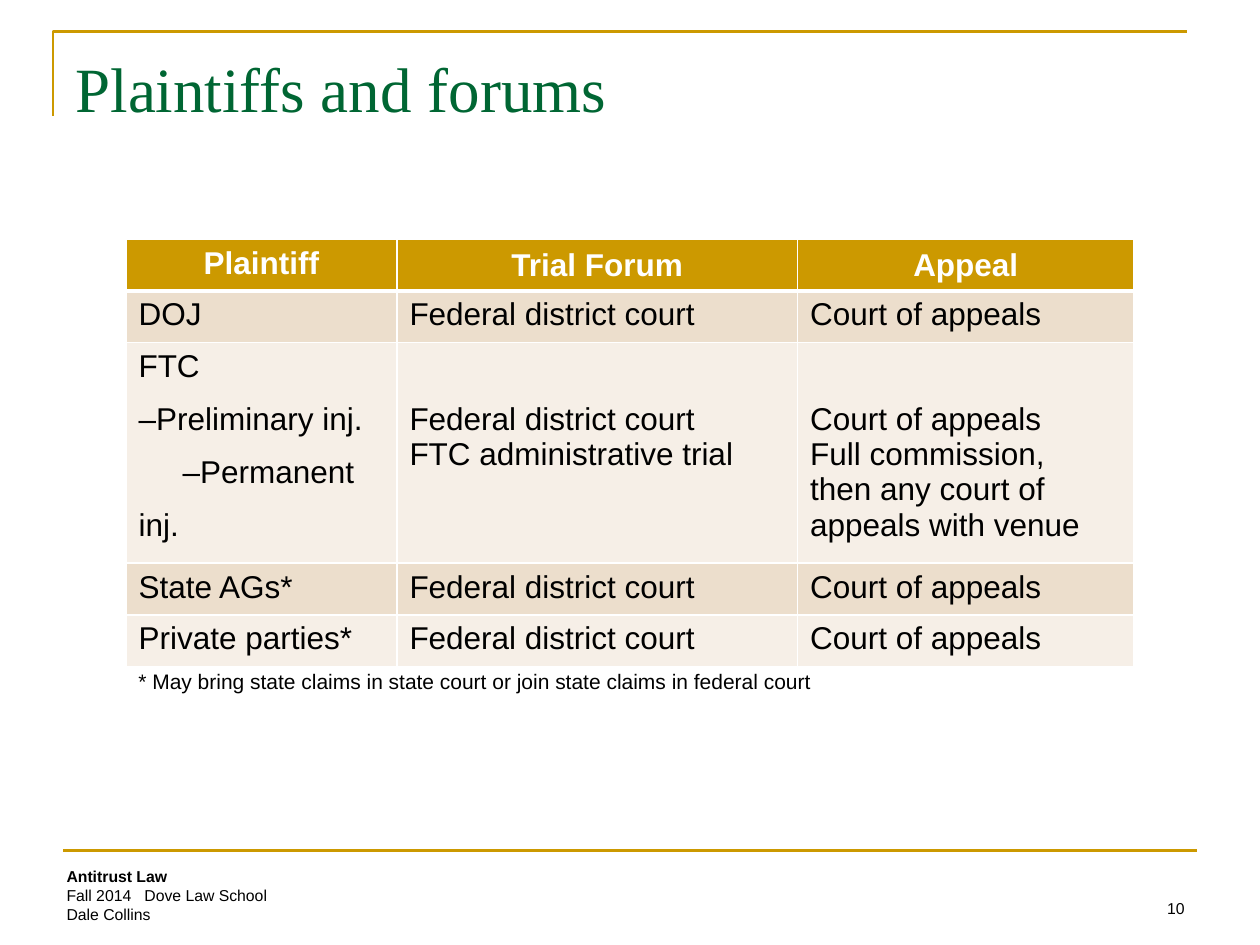
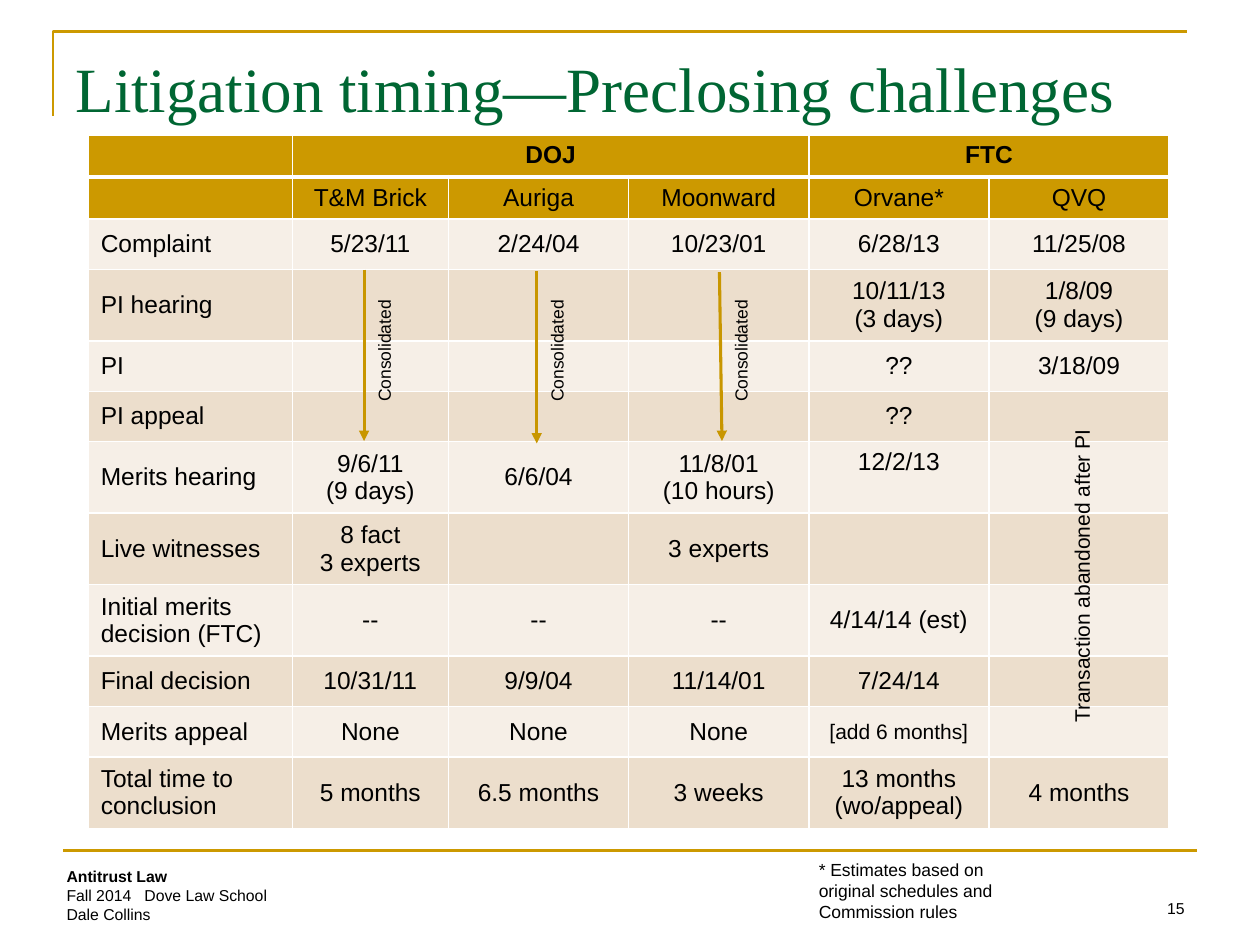
from dataclasses import dataclass

from lxml import etree
from pptx import Presentation
from pptx.dml.color import RGBColor
from pptx.enum import shapes, text
from pptx.oxml import ns
from pptx.util import Inches, Pt


@dataclass(frozen=True)
class Theme:
    gold: str = "CC9900"
    arrow: str = "C89600"
    green: str = "006633"
    dark: str = "ECDECC"
    pale: str = "F6EFE7"
    ink: str = "000000"
    white: str = "FFFFFF"
    serif: str = "Times New Roman"
    sans: str = "Arial"
    title: int = 36
    large: int = 18
    table: int = 14
    note: int = 12
    small: int = 10
    foot: int = 9


T = Theme()
LEFT, MID, RIGHT = text.PP_ALIGN.LEFT, text.PP_ALIGN.CENTER, text.PP_ALIGN.RIGHT
TOP, CENTER, BOTTOM = (text.MSO_ANCHOR.TOP, text.MSO_ANCHOR.MIDDLE,
                       text.MSO_ANCHOR.BOTTOM)

FORUMS = [
    ["Plaintiff", "Trial Forum", "Appeal"],
    ["DOJ", "Federal district court", "Court of appeals"],
    ["FTC\n–Preliminary inj.\n–Permanent inj.",
     "Federal district court\nFTC administrative trial",
     "Court of appeals\nFull commission,\nthen any court of appeals with venue"],
    ["State AGs*", "Federal district court", "Court of appeals"],
    ["Private parties*", "Federal district court", "Court of appeals"],
]

TIMING = [
    ["", "DOJ", "", "", "FTC", ""],
    ["", "T&M Brick", "Auriga", "Moonward", "Orvane*", "QVQ"],
    ["Complaint", "5/23/11", "2/24/04", "10/23/01", "6/28/13", "11/25/08"],
    ["PI hearing", "", "", "", "10/11/13\n(3 days)", "1/8/09\n(9 days)"],
    ["PI", "", "", "", "??", "3/18/09"],
    ["PI appeal", "", "", "", "??", ""],
    ["Merits hearing", "9/6/11\n(9 days)", "6/6/04", "11/8/01\n(10 hours)",
     "12/2/13", ""],
    ["Live witnesses", "8 fact\n3 experts", "", "3 experts", "", ""],
    ["Initial merits decision (FTC)", "--", "--", "--", "4/14/14 (est)", ""],
    ["Final decision", "10/31/11", "9/9/04", "11/14/01", "7/24/14", ""],
    ["Merits appeal", "None", "None", "None", "[add 6 months]", ""],
    ["Total time to conclusion", "5 months", "6.5 months", "3 weeks",
     "13 months\n(wo/appeal)", "4 months"],
]


def rgb(tone):
    return RGBColor.from_string(tone)


def write(frame, words, size=T.note, face=T.sans, tone=T.ink, bold=False, align=LEFT):
    frame.text = words
    for para in frame.paragraphs:
        para.alignment = align
        for run in para.runs:
            font = run.font
            font.size, font.name, font.bold = Pt(size), face, bold
            font.color.rgb = rgb(tone)
        if not para.runs:
            para._p.get_or_add_endParaRPr().set("sz", str(size * 100))


def label(slide, words, box, turn=0, wrap=True, anchor=TOP, **style):
    shape = slide.shapes.add_textbox(*map(Inches, box))
    shape.rotation = turn
    frame = shape.text_frame
    frame.word_wrap, frame.vertical_anchor = wrap, anchor
    write(frame, words, **style)
    return frame


def line(slide, start, end, tone=T.gold, width=1.5, arrow=False):
    link = slide.shapes.add_connector(shapes.MSO_CONNECTOR.STRAIGHT,
                                      *map(Inches, start + end))
    link.line.color.rgb, link.line.width = rgb(tone), Pt(width)
    if arrow:
        tip = etree.SubElement(link.line._get_or_add_ln(), ns.qn("a:tailEnd"))
        tip.set("type", "triangle")
    etree.SubElement(link._element.spPr, ns.qn("a:effectLst"))


def corner(slide):
    pen = slide.shapes.build_freeform(Inches(0.42), Inches(0.92))
    pen.add_line_segments([(Inches(0.42), Inches(0.25)),
                           (Inches(9.42), Inches(0.25))], close=False)
    shape = pen.convert_to_shape()
    shape.shadow.inherit = False
    shape.fill.background()
    shape.line.color.rgb, shape.line.width = rgb(T.gold), Pt(1.5)


def page(deck, title, number):
    slide = deck.slides.add_slide(deck.slide_layouts.get_by_name("Title Only"))
    head = slide.shapes.title
    head.left, head.top, head.width, head.height = map(Inches, (0.5, 0.3, 9, 0.78))
    head.text_frame.auto_size = text.MSO_AUTO_SIZE.NONE
    head.text_frame.vertical_anchor = CENTER
    write(head.text_frame, title, size=T.title, face=T.serif, tone=T.green)
    corner(slide)
    line(slide, (0.5, 6.75), (9.5, 6.75))
    foot = label(slide, "Antitrust Law\nFall 2014   Dove Law School\nDale Collins",
                 (0.43, 6.83, 4.67, 0.56), size=T.foot)
    foot.paragraphs[0].runs[0].font.bold = True
    label(slide, str(number), (7.17, 6.83, 2.33, 0.5), anchor=BOTTOM,
          size=T.foot, align=RIGHT)
    return slide


def edge(cell, row):
    props = cell._tc.get_or_add_tcPr()
    heavy = {0: "lnB", 1: "lnT"}.get(row)
    for side in ("lnL", "lnR", "lnT", "lnB"):
        rim = etree.SubElement(props, ns.qn("a:" + side))
        rim.set("w", str(Pt(3 if side == heavy else 1)))
        fill = etree.SubElement(rim, ns.qn("a:solidFill"))
        etree.SubElement(fill, ns.qn("a:srgbClr")).set("val", T.white)


def grid(slide, data, spot, cols, rows, fills, style):
    left, top = spot
    frame = slide.shapes.add_table(len(rows), len(cols), Inches(left), Inches(top),
                                   Inches(sum(cols)), Inches(sum(rows)))
    table = frame.table
    table.first_row = table.horz_banding = False
    for col, width in zip(table.columns, cols):
        col.width = Inches(width)
    for r, (height, words) in enumerate(zip(rows, data)):
        table.rows[r].height = Inches(height)
        for c, word in enumerate(words):
            cell = table.cell(r, c)
            edge(cell, r)
            cell.fill.solid()
            cell.fill.fore_color.rgb = rgb(fills[r])
            look = style(r, c)
            cell.vertical_anchor = look.pop("anchor", TOP)
            write(cell.text_frame, word, **look)
    return table


def forum(r, c):
    if r == 0:
        return dict(size=T.large, tone=T.white, bold=True, align=MID,
                    anchor=CENTER if c else TOP)
    return dict(size=T.large)


def timing(r, c):
    return dict(size=T.note if (r, c) == (10, 4) else T.table, bold=r == 0,
                align=MID if c else LEFT,
                anchor=TOP if r == 0 or (r, c) == (6, 4) else CENTER)


def forums(deck):
    slide = page(deck, "Plaintiffs and forums", 10)
    table = grid(slide, FORUMS, (1, 1.9), [2.15, 3.18, 2.67],
                 [0.41, 0.41, 1.63, 0.41, 0.41],
                 [T.gold] + [T.dark, T.pale] * 2, forum)
    orders = table.cell(2, 0).text_frame.paragraphs[1:]
    for para in orders:
        para.line_spacing = 1.5
    orders[-1]._p.get_or_add_pPr().set("indent", str(Inches(0.35)))
    for c in (1, 2):
        table.cell(2, c).margin_top = Inches(0.47)
    label(slide, "* May bring state claims in state court or join state claims "
          "in federal court", (1, 5.26, 5.8, 0.3))


def times(deck):
    slide = page(deck, "Litigation timing—Preclosing challenges", 15)
    tall, low = 0.55, 0.4
    table = grid(slide, TIMING, (0.7, 1.07), [1.62, 1.24] + [1.43] * 4,
                 [0.33, 0.33, low, tall, low, low] + [tall] * 3 + [low, low, tall],
                 [T.gold] * 2 + [T.pale, T.dark] * 5, timing)
    table.cell(0, 1).merge(table.cell(0, 3))
    table.cell(0, 4).merge(table.cell(0, 5))
    for start, end, left in (((2.89, 2.14), (2.89, 3.5), 2.46),
                             ((4.26, 2.15), (4.26, 3.52), 3.83),
                             ((5.71, 2.16), (5.73, 3.5), 5.29)):
        line(slide, start, end, tone=T.arrow, width=1.75, arrow=True)
        label(slide, "Consolidated", (left, 2.65, 1.18, 0.27), turn=270,
              size=T.small, align=MID)
    label(slide, "Transaction abandoned after PI", (7.31, 4.41, 2.55, 0.3),
          turn=270, wrap=False)
    label(slide, "* Estimates based on original schedules and Commission rules",
          (6.4, 6.77, 1.86, 0.61), size=T.small)


def main():
    deck = Presentation()
    deck.slide_width, deck.slide_height = Inches(10), Inches(7.5)
    forums(deck)
    times(deck)
    deck.save("out.pptx")


if __name__ == "__main__":
    main()
